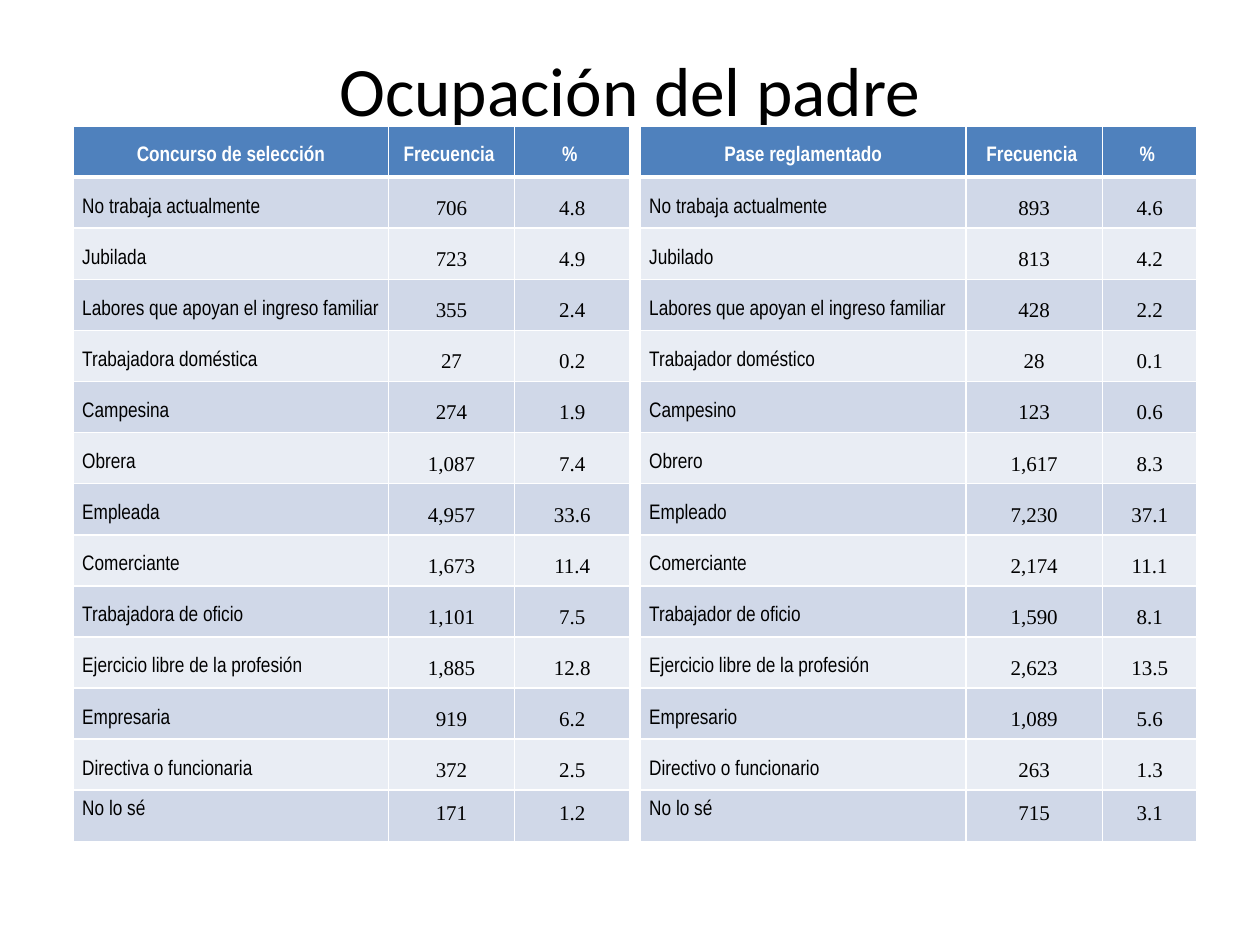
from dataclasses import dataclass

from lxml import etree
from pptx import Presentation
from pptx.dml.color import RGBColor
from pptx.enum.text import MSO_ANCHOR, PP_ALIGN
from pptx.oxml.ns import qn
from pptx.slide import Slide
from pptx.table import _Cell
from pptx.text.text import _Paragraph
from pptx.util import Pt

CENTER, LEFT = PP_ALIGN.CENTER, PP_ALIGN.LEFT
MIDDLE, TOP = MSO_ANCHOR.MIDDLE, MSO_ANCHOR.TOP
COLORS = {"text": "000000", "header": "4F81BD", "odd": "D0D8E8", "even": "E9EDF4", "white": "FFFFFF"}
TITLE_FONT, LABEL_FONT, NUMBER_FONT = "Calibri", "Arial Narrow", "Times New Roman"
TABLE_TOP, ROW_HEIGHT = 72, 29.2
THIN, THICK = 1, 3


@dataclass(frozen=True)
class OccupationTable:
    left: float
    widths: tuple[float, ...]
    heading: str
    rows: tuple[tuple[str, str, str], ...]


TABLES = (
    OccupationTable(42, (180, 72, 66), "Concurso de selección", (
        ("No trabaja actualmente", "706", "4.8"),
        ("Jubilada", "723", "4.9"),
        ("Labores que apoyan el ingreso familiar", "355", "2.4"),
        ("Trabajadora doméstica", "27", "0.2"),
        ("Campesina", "274", "1.9"),
        ("Obrera", "1,087", "7.4"),
        ("Empleada", "4,957", "33.6"),
        ("Comerciante", "1,673", "11.4"),
        ("Trabajadora de oficio", "1,101", "7.5"),
        ("Ejercicio libre de la profesión", "1,885", "12.8"),
        ("Empresaria", "919", "6.2"),
        ("Directiva o funcionaria", "372", "2.5"),
        ("No lo sé", "171", "1.2"),
    )),
    OccupationTable(366, (186, 78, 54), "Pase reglamentado", (
        ("No trabaja actualmente", "893", "4.6"),
        ("Jubilado", "813", "4.2"),
        ("Labores que apoyan el ingreso familiar", "428", "2.2"),
        ("Trabajador doméstico", "28", "0.1"),
        ("Campesino", "123", "0.6"),
        ("Obrero", "1,617", "8.3"),
        ("Empleado", "7,230", "37.1"),
        ("Comerciante", "2,174", "11.1"),
        ("Trabajador de oficio", "1,590", "8.1"),
        ("Ejercicio libre de la profesión", "2,623", "13.5"),
        ("Empresario", "1,089", "5.6"),
        ("Directivo o funcionario", "263", "1.3"),
        ("No lo sé", "715", "3.1"),
    )),
)


def add_run(paragraph: _Paragraph, text: str, font: str, size: float, color: str, bold: bool = False) -> None:
    run = paragraph.add_run()
    run.text = text
    run.font.name = font
    run.font.size = Pt(size)
    run.font.bold = bold
    run.font.color.rgb = RGBColor.from_string(COLORS[color])


def set_borders(cell: _Cell, top: float, bottom: float) -> None:
    properties = cell._tc.get_or_add_tcPr()
    for side, width in (("L", THIN), ("R", THIN), ("T", top), ("B", bottom)):
        line = etree.SubElement(properties, qn(f"a:ln{side}"), w=str(Pt(width)))
        fill = etree.SubElement(line, qn("a:solidFill"))
        etree.SubElement(fill, qn("a:srgbClr"), val=COLORS["white"])


def fill_cell(cell: _Cell, text: str, row: int, column: int, last_row: int) -> None:
    is_header = row == 0
    set_borders(cell, THICK if row == 1 else THIN, THICK if is_header else THIN)
    cell.fill.solid()
    background = "header" if is_header else ("even", "odd")[row % 2]
    cell.fill.fore_color.rgb = RGBColor.from_string(COLORS[background])
    cell.margin_left = cell.margin_right = Pt(5)
    cell.margin_top = cell.margin_bottom = Pt(0)
    cell.vertical_anchor = TOP if row == last_row else MIDDLE
    paragraph = cell.text_frame.paragraphs[0]
    paragraph.alignment = CENTER if is_header or column else LEFT
    paragraph.line_spacing = 1.5
    font = LABEL_FONT if is_header or column == 0 else NUMBER_FONT
    add_run(paragraph, text, font, 12, "white" if is_header else "text", is_header)


def add_occupation_table(slide: Slide, data: OccupationTable) -> None:
    rows = ((data.heading, "Frecuencia ", "% "), *data.rows)
    table = slide.shapes.add_table(
        len(rows), len(data.widths), Pt(data.left), Pt(TABLE_TOP),
        Pt(sum(data.widths)), Pt(ROW_HEIGHT * len(rows))).table
    for column, width in enumerate(data.widths):
        table.columns[column].width = Pt(width)
    for row, texts in enumerate(rows):
        table.rows[row].height = Pt(ROW_HEIGHT)
        for column, text in enumerate(texts):
            fill_cell(table.cell(row, column), text, row, column, len(rows) - 1)


def add_title(slide: Slide, text: str) -> None:
    frame = slide.shapes.add_textbox(Pt(36), Pt(30), Pt(648), Pt(42)).text_frame
    frame.word_wrap = True
    frame.vertical_anchor = MIDDLE
    paragraph = frame.paragraphs[0]
    paragraph.alignment = CENTER
    add_run(paragraph, text, TITLE_FONT, 39.6, "text")


def main() -> None:
    """Build the slide comparing the father's occupation by admission route."""
    presentation = Presentation()
    presentation.slide_width, presentation.slide_height = Pt(720), Pt(540)
    slide = presentation.slides.add_slide(presentation.slide_layouts[6])
    add_title(slide, "Ocupación del padre")
    for data in TABLES:
        add_occupation_table(slide, data)
    presentation.save("out.pptx")


if __name__ == "__main__":
    main()
